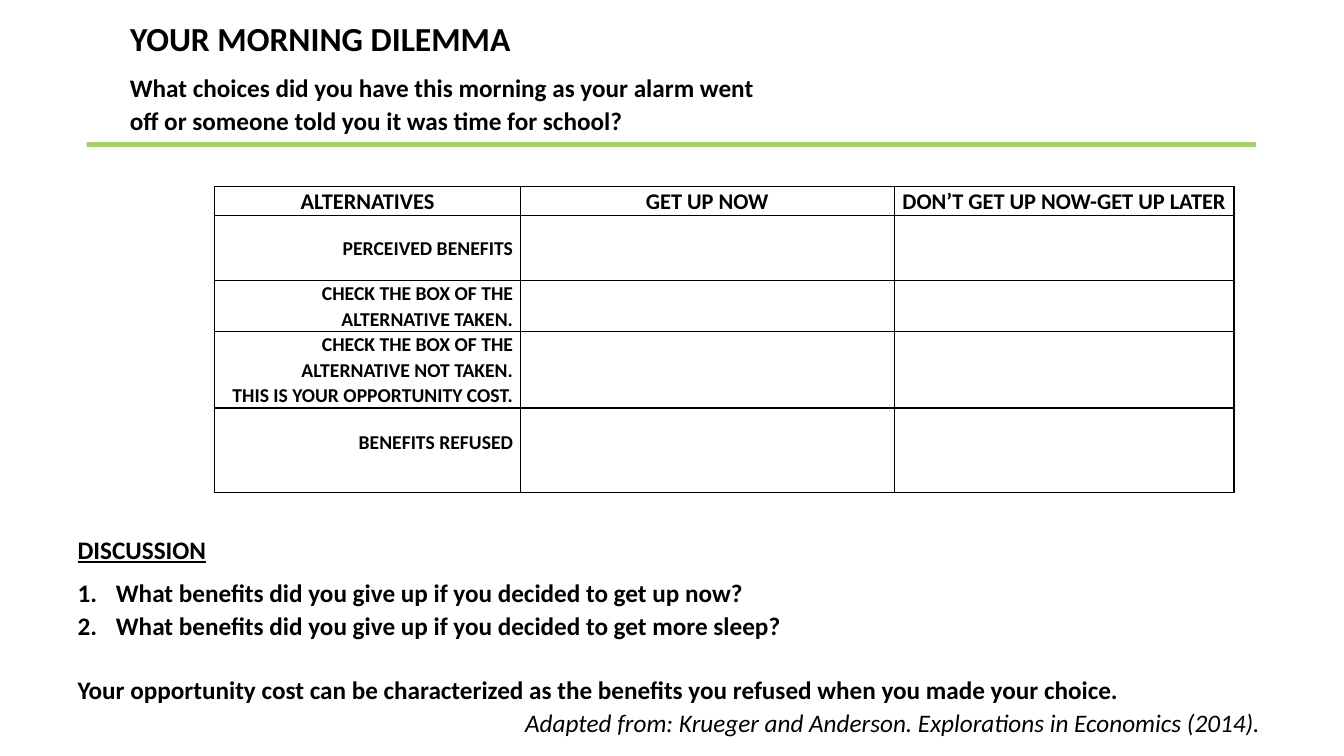
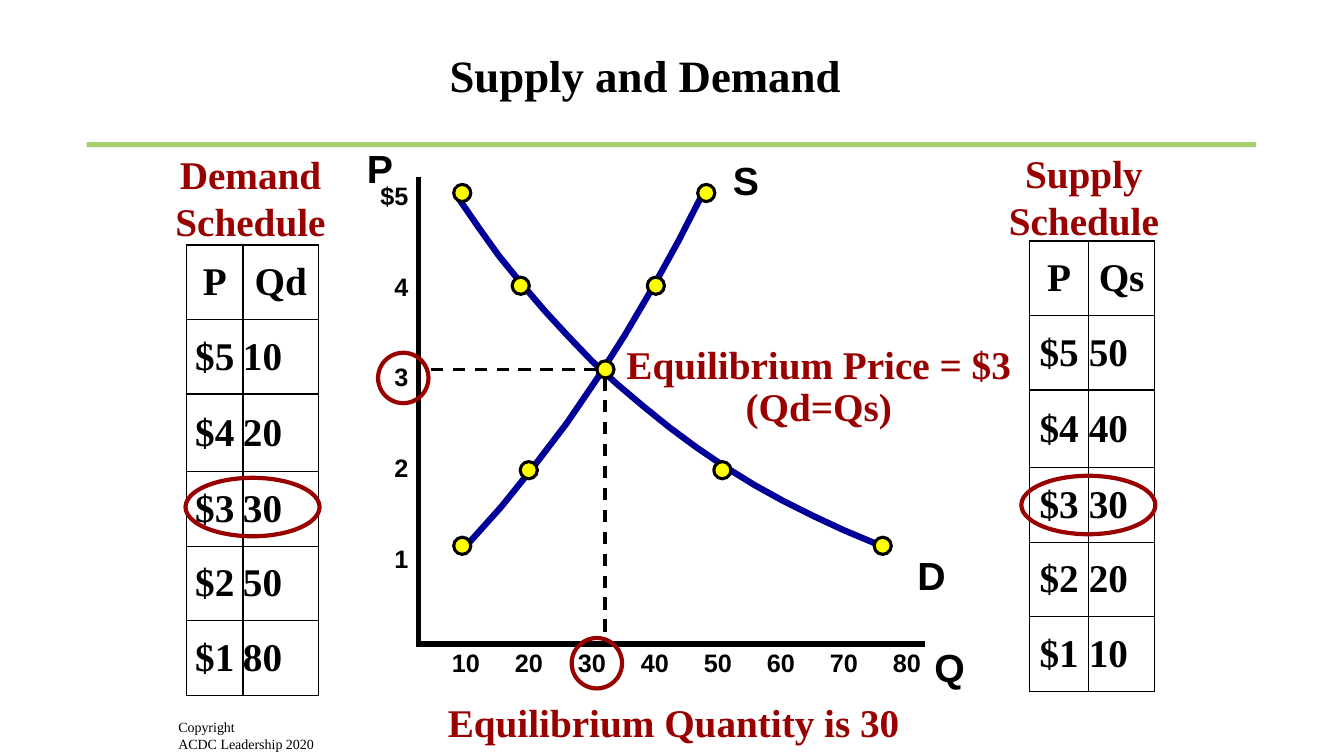
from lxml import etree
from pptx import Presentation
from pptx.dml.color import RGBColor
from pptx.enum.dml import MSO_LINE_DASH_STYLE as DASH
from pptx.enum.shapes import MSO_CONNECTOR as CONN, MSO_SHAPE as SHAPE
from pptx.enum.text import MSO_ANCHOR as ANCHOR, MSO_AUTO_SIZE as FIT, PP_ALIGN as ALIGN
from pptx.oxml.ns import qn
from pptx.util import Inches, Pt

BLACK = RGBColor(0x00, 0x00, 0x00)
GREEN = RGBColor(0xA7, 0xCE, 0x6F)
RED = RGBColor(0x99, 0x00, 0x00)
BLUE = RGBColor(0x00, 0x00, 0x99)
YELLOW = RGBColor(0xFF, 0xFF, 0x00)
SANS, SERIF, ARIAL = "Calibri", "Times New Roman", "Arial"
LOOSE = 1.07
INSET = (0.1, 0.05, 0.1, 0.05)


def place(shape, box):
    for name, value in zip(("left", "top", "width", "height"), box):
        setattr(shape, name, Inches(value))


def style(para, size, font=SANS, color=BLACK, bold=True, italic=False,
          under=False, **form):
    """Format a paragraph; form holds its alignment and spacing."""
    look = {"size": Pt(size), "name": font, "bold": bold, "italic": italic,
            "underline": under}
    for run in para.runs:
        for name, value in look.items():
            setattr(run.font, name, value)
        run.font.color.rgb = color
    for name, value in form.items():
        setattr(para, name, value)


def fill_text(frame, lines, anchor=ANCHOR.TOP, inset=INSET, **form):
    frame.word_wrap = True
    frame.auto_size = FIT.NONE
    frame.vertical_anchor = anchor
    sides = ("margin_left", "margin_top", "margin_right", "margin_bottom")
    for side, value in zip(sides, inset):
        setattr(frame, side, Inches(value))
    for i, line in enumerate(lines):
        para = frame.add_paragraph() if i else frame.paragraphs[0]
        para.add_run().text = line
        style(para, **form)
    return frame


def add_text(slide, box, *lines, **form):
    shape = slide.shapes.add_textbox(*map(Inches, box))
    return fill_text(shape.text_frame, lines, **form)


def start_slide(prs, title, box, **form):
    """Add a slide with the green band and a title."""
    slide = prs.slides.add_slide(prs.slide_layouts[5])
    add_shape(slide, SHAPE.RECTANGLE, (0.86, 1.41, 11.6, 0.05), fill=GREEN)
    place(slide.shapes.title, box)
    fill_text(slide.shapes.title.text_frame, [title], **form)
    return slide


def add_shape(slide, kind, box, fill=None, line=None, width=1):
    shape = slide.shapes.add_shape(kind, *map(Inches, box))
    paint(shape, fill, line, width)


def paint(shape, fill, line, width):
    shape.shadow.inherit = False
    for part, color in ((shape.fill, fill), (shape.line.fill, line)):
        if color is None:
            part.background()
        else:
            part.solid()
            part.fore_color.rgb = color
    if line is not None:
        shape.line.width = Pt(width)


def add_line(slide, x1, y1, x2, y2, width, dash=None):
    line = slide.shapes.add_connector(CONN.STRAIGHT, *map(Inches, (x1, y1, x2, y2)))
    line.line.color.rgb = BLACK
    line.line.width = Pt(width)
    if dash:
        line.line.dash_style = dash
    etree.SubElement(line._element.spPr, qn("a:effectLst"))


def add_grid(slide, left, top, cols, rows):
    """Add an unfilled table with thin black borders."""
    frame = slide.shapes.add_table(len(rows), len(cols), Inches(left), Inches(top),
                                   Inches(sum(cols)), Inches(sum(rows)))
    table = frame.table
    table.first_row = table.horz_banding = False
    for col, width in zip(table.columns, cols):
        col.width = Inches(width)
    for row, height in zip(table.rows, rows):
        row.height = Inches(height)
    for cell in table.iter_cells():
        props = cell._tc.get_or_add_tcPr()
        for side in ("lnL", "lnR", "lnT", "lnB"):
            edge = etree.SubElement(props, qn("a:" + side), w=str(Pt(1)))
            solid = etree.SubElement(edge, qn("a:solidFill"))
            etree.SubElement(solid, qn("a:srgbClr"), val=str(BLACK))
        cell.fill.background()
    return table


def fill_cell(cell, lines, inset, **form):
    sides = ("margin_left", "margin_top", "margin_right", "margin_bottom")
    for side, value in zip(sides, inset):
        setattr(cell, side, Inches(value))
    cell.vertical_anchor = ANCHOR.MIDDLE
    for i, line in enumerate(lines):
        para = cell.text_frame.add_paragraph() if i else cell.text_frame.paragraphs[0]
        para.add_run().text = line
        style(para, **form)


def add_choices(slide, left, top):
    heads = ("ALTERNATIVES", "GET UP NOW", "DON’T GET UP NOW-GET UP LATER")
    labels = (
        (["PERCEIVED BENEFITS"], 0),
        (["CHECK THE BOX OF THE ALTERNATIVE TAKEN."], 0),
        (["CHECK THE BOX OF THE ALTERNATIVE NOT TAKEN.",
          "THIS IS YOUR OPPORTUNITY COST."], 0),
        (["BENEFITS REFUSED"], 0.16),
    )
    table = add_grid(slide, left, top, (3.03, 3.71, 3.37), (0.28, 0.64, 0.5, 0.75, 0.84))
    for col, head in enumerate(heads):
        fill_cell(table.cell(0, col), [head], (0.07, 0, 0.07, 0), size=16,
                  alignment=ALIGN.CENTER, line_spacing=LOOSE)
    for row, (lines, base) in enumerate(labels, 1):
        fill_cell(table.cell(row, 0), lines, (0.07, 0, 0.07, base), size=14,
                  alignment=ALIGN.RIGHT, line_spacing=LOOSE)


def add_talk(slide, box):
    """Add the discussion heading, questions, closing line and source."""
    frame = add_text(
        slide, box, "DISCUSSION",
        "What benefits did you give up if you decided to get up now?",
        "What benefits did you give up if you decided to get more sleep?",
        "Your opportunity cost can be characterized as the benefits you refused "
        "when you made your choice.",
        "Adapted from: Krueger and Anderson. Explorations in Economics (2014).",
        inset=(0.05,) * 4, size=18, line_spacing=LOOSE, space_after=Pt(0))
    head, *asks, close, source = frame.paragraphs
    style(head, 18, under=True, space_after=Pt(8))
    for para in asks:
        props = para._p.get_or_add_pPr()
        props.set("marL", str(Inches(0.38)))
        props.set("indent", str(-Inches(0.38)))
        etree.SubElement(props, qn("a:buFont"), typeface="+mj-lt")
        etree.SubElement(props, qn("a:buAutoNum"), type="arabicPeriod")
    close.space_before = Pt(23)
    style(source, 18, bold=False, italic=True, alignment=ALIGN.RIGHT)


def morning(prs):
    slide = start_slide(prs, "YOUR MORNING DILEMMA", (1.19, 0.1, 6.67, 0.55),
                        size=24, alignment=ALIGN.LEFT, line_spacing=LOOSE)
    add_text(slide, (1.19, 0.65, 6.67, 0.75),
             "What choices did you have this morning as your alarm went off "
             "or someone told you it was time for school?",
             size=18, line_spacing=LOOSE)
    add_choices(slide, 2.13, 1.85)
    add_talk(slide, (0.72, 5.23, 11.83, 2.2))


def add_plan(slide, left, top, cols, title, title_box, head, amounts, ring):
    """Add a titled price schedule and ring its $3 row."""
    add_text(slide, title_box, title, size=28, font=SERIF, color=RED,
             alignment=ALIGN.CENTER)
    table = add_grid(slide, left, top, cols, (0.74, 0.74, 0.77, 0.74, 0.74, 0.74))
    pairs = [("P", head)] + [(f"${5 - i}", str(n)) for i, n in enumerate(amounts)]
    for row, pair in enumerate(pairs):
        for col, word in enumerate(pair):
            align = ALIGN.LEFT if row and col else ALIGN.CENTER
            fill_cell(table.cell(row, col), [word], (0,) * 4, size=28, font=SERIF,
                      alignment=align)
    add_ring(slide, *ring, 1.33, 0.58)


def add_ring(slide, left, top, width, height):
    add_shape(slide, SHAPE.OVAL, (left, top, width, height), line=RED, width=3)


def add_curve(slide, left, top, points, dots):
    """Draw a curve and its dots, placed from the graph's corner."""
    (x, y), *rest = [(Inches(left + x), Inches(top + y)) for x, y in points]
    pen = slide.shapes.build_freeform(x, y)
    pen.add_line_segments(rest, close=False)
    paint(pen.convert_to_shape(), None, BLUE, 4.5)
    for x, y in dots:
        add_shape(slide, SHAPE.OVAL, (left + x, top + y, 0.17, 0.17), YELLOW, BLACK, 2.25)


def add_graph(slide, left, top):
    """Draw the graph; left and top mark the upper end of the price axis."""
    add_line(slide, left, top, left, top + 4.66, 4)
    add_line(slide, left - 0.02, top + 4.63, left + 5.02, top + 4.63, 4)
    for i, price in enumerate(("$5", "4", "3", "2", "1")):
        add_text(slide, (left - 0.75, top - 0.02 + 0.9 * i, 0.75, 0.4), price,
                 size=18, font=ARIAL, alignment=ALIGN.RIGHT)
    for i in range(8):
        add_text(slide, (left + 0.15 + 0.625 * i, top + 4.61, 0.64, 0.4),
                 str(10 * (i + 1)), size=18, font=ARIAL, alignment=ALIGN.CENTER)
    for name, x, y in (("P", -0.61, -0.38), ("Q", 5.02, 4.57),
                       ("D", 4.85, 3.66), ("S", 3.02, -0.26)):
        add_text(slide, (left + x, top + y, 0.5, 0.57), name, size=28, font=ARIAL)
    demand = ((0.4, 0.21), (0.6, 0.5), (0.8, 0.78), (1.02, 1.05), (1.25, 1.32),
              (1.48, 1.57), (1.72, 1.82), (1.97, 2.05), (2.23, 2.27), (2.49, 2.48),
              (2.76, 2.68), (3.04, 2.87), (3.33, 3.05), (3.62, 3.21), (3.92, 3.36),
              (4.22, 3.5), (4.53, 3.63))
    supply = ((0.47, 3.66), (0.82, 3.27), (1.15, 2.86), (1.47, 2.44), (1.77, 2),
              (2.05, 1.56), (2.32, 1.1), (2.58, 0.63), (2.82, 0.16))
    add_curve(slide, left, top, demand,
              ((0.35, 0.07), (0.93, 0.99), (2.93, 2.82), (4.52, 3.57)))
    add_curve(slide, left, top, supply,
              ((0.35, 3.57), (1.01, 2.82), (2.27, 0.99), (2.77, 0.07), (1.77, 1.82)))
    add_line(slide, left + 1.77, top + 1.91, left + 0.02, top + 1.91, 2.25, DASH.DASH)
    add_line(slide, left + 1.85, top + 1.99, left + 1.85, top + 4.57, 2.25, DASH.DASH)
    add_ring(slide, left - 0.4, top + 1.74, 0.5, 0.5)
    add_ring(slide, left + 1.52, top + 4.57, 0.5, 0.5)
    note = {"size": 28, "font": SERIF, "color": RED, "alignment": ALIGN.CENTER}
    add_text(slide, (left + 1.93, top + 1.62, 4.08, 0.96),
             "Equilibrium Price = $3 (Qd=Qs)", line_spacing=0.9, **note)
    add_text(slide, (left - 0.01, top + 5.12, 5.08, 0.57),
             "Equilibrium Quantity is 30", **note)


def market(prs):
    slide = start_slide(prs, "Supply and Demand", (1.63, 0.16, 9.54, 1.17),
                        anchor=ANCHOR.MIDDLE, size=32, font=SERIF,
                        alignment=ALIGN.CENTER)
    add_plan(slide, 1.85, 2.43, (0.56, 0.75), "Demand Schedule",
             (1.57, 1.44, 1.83, 1.03), "Qd", (10, 20, 30, 50, 80), (1.84, 4.74))
    add_plan(slide, 10.21, 2.39, (0.59, 0.65), "Supply Schedule",
             (9.79, 1.43, 1.92, 1.03), "Qs", (50, 40, 30, 20, 10), (10.13, 4.72))
    add_graph(slide, 4.15, 1.76)
    add_text(slide, (1.67, 7.08, 1.67, 0.42), "Copyright", "ACDC Leadership 2020",
             size=10, font=SERIF, bold=False)


def main():
    prs = Presentation()
    prs.slide_width, prs.slide_height = Inches(13.33), Inches(7.5)
    morning(prs)
    market(prs)
    prs.save("out.pptx")


if __name__ == "__main__":
    main()
